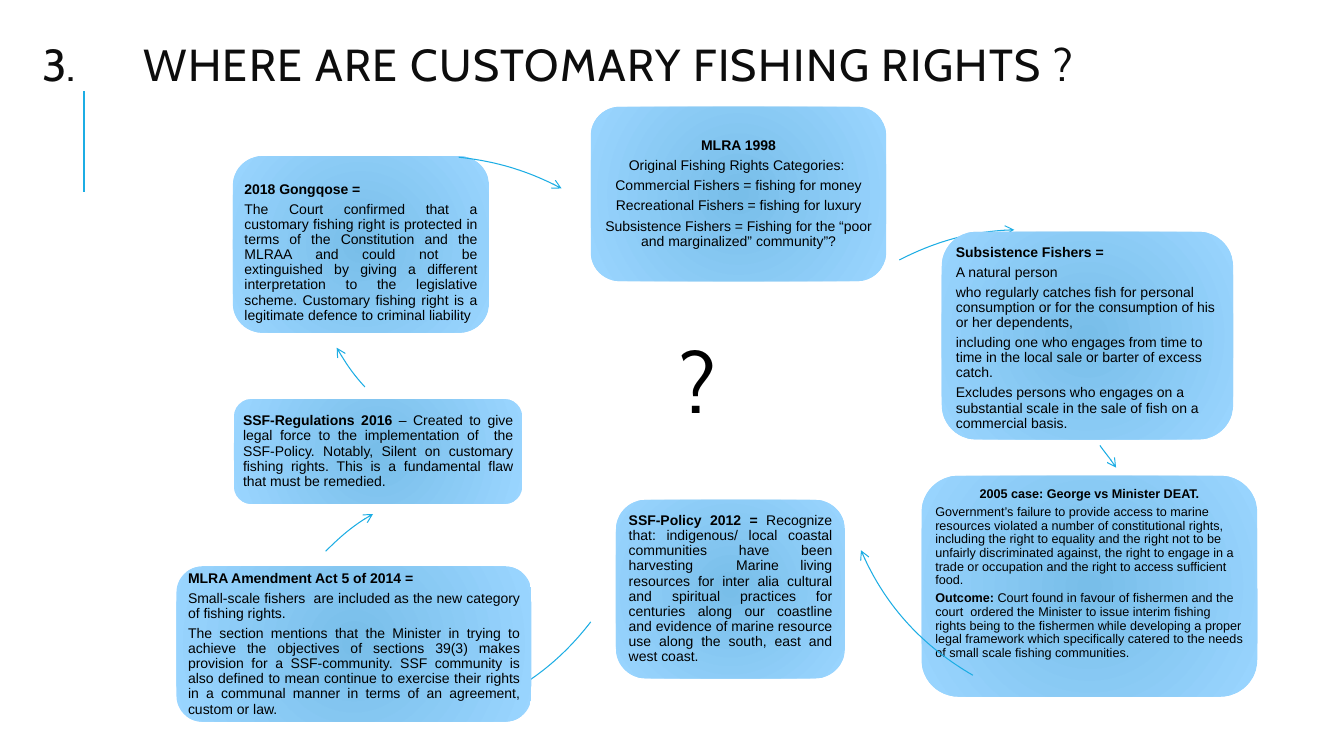
from lxml.etree import SubElement as Sub
from pptx import Presentation
from pptx.dml.color import RGBColor
from pptx.enum.shapes import MSO_CONNECTOR as Conn, MSO_SHAPE as Shape
from pptx.enum.text import MSO_ANCHOR as Anchor, MSO_AUTO_SIZE as Auto, PP_ALIGN as Align
from pptx.oxml.ns import qn
from pptx.util import Pt

PX = 9144
RING = 523
BLUE, BLACK = "1CADE4", "000000"
LEFT, MID, JUST = Align.LEFT, Align.CENTER, Align.JUSTIFY

CARDS = [
    dict(box=(586, 106, 293, 173), align=MID, lines=[
        "MLRA 1998|",
        "Original Fishing Rights Categories: ",
        "Commercial Fishers = fishing for money",
        "Recreational Fishers = fishing for luxury",
        "Subsistence Fishers = Fishing for the “poor and marginalized” community”?"]),
    dict(box=(934, 230, 289, 206), align=LEFT, anchor=Anchor.TOP, top=3, lines=[
        "Subsistence Fishers =|",
        "A natural person",
        "who regularly catches fish for personal consumption or for the consumption of his "
        "or her dependents,",
        "including one who engages from time to time in the local sale or barter of excess catch.",
        "Excludes persons who engages on a substantial scale in the sale of fish on a "
        "commercial basis."]),
    dict(box=(914, 472, 333, 219), align=LEFT, anchor=Anchor.TOP, size=9, pad=3, top=1, first=MID,
         lines=[
        "2005 case: George vs Minister DEAT.|",
        "Government’s failure to provide access to marine resources violated a number of "
        "constitutional rights, including the right to equality and the right not to be unfairly "
        "discriminated against, the right to engage in a trade or occupation and the right to "
        "access sufficient food.",
        "Outcome:| Court found in favour of fishermen and the court  ordered the Minister to "
        "issue interim fishing rights being to the fishermen while developing a proper legal "
        "framework which specifically catered to the needs of small scale fishing communities."]),
    dict(box=(611, 496, 227, 177), lines=[
        "SSF-Policy 2012 = |Recognize that: indigenous/ local coastal communities have been "
        "harvesting  Marine living resources for inter alia cultural and spiritual practices for "
        "centuries along our coastline and evidence of marine resource use along the south, "
        "east and west coast."]),
    dict(box=(175, 562, 352, 154), lines=[
        "MLRA Amendment Act 5 of 2014 = |",
        "Small-scale fishers  are included as the new category of fishing rights. ",
        "The section mentions that the Minister in trying to achieve the objectives of sections "
        "39(3) makes provision for a SSF-community. SSF community is also defined to mean "
        "continue to exercise their rights in a communal manner in terms of an agreement, "
        "custom or law."]),
    dict(box=(232, 396, 286, 104), lines=[
        "SSF-Regulations 2016 |– Created to give legal force to the implementation of  the "
        "SSF-Policy. Notably, Silent on customary fishing rights. This is a fundamental flaw "
        "that must be remedied. "]),
    dict(box=(231, 155, 254, 175), anchor=Anchor.TOP, pad=3, top=17, lines=[
        "2018 Gongqose = |",
        "The Court confirmed that a customary fishing right is protected in terms of the "
        "Constitution and the MLRAA and could not be extinguished by giving a different "
        "interpretation to the legislative scheme. Customary fishing right is a legitimate "
        "defence to criminal liability"]),
]

ARCS = [
    ((753, 228), ((892, 258), (927, 240), (966, 229), (1006, 228))),
    ((626, 345), ((1091, 442), (1096, 449), (1102, 456), (1107, 464))),
    ((832, 181), ((965, 670), (915, 641), (876, 598), (854, 546))),
    ((116, 197), ((586, 617), (556, 656), (515, 687), (468, 704))),
    ((247, 470), ((323, 547), (337, 533), (352, 520), (370, 510))),
    ((299, -48), ((362, 384), (351, 372), (342, 359), (334, 345))),
    ((169, 155), ((455, 156), (491, 160), (525, 170), (557, 187))),
]


def px(*vals):
    """Turn px lengths into EMU."""
    return [round(v * PX) for v in vals]


def hue(code):
    """Turn a hex string into a colour."""
    return RGBColor.from_string(code)


def write(frame, lines, size=10, font="Arial", color=BLACK, align=LEFT, lead=0.9, after=0.35):
    """Fill a frame with paragraphs; text before a bar is bold."""
    frame.word_wrap = True
    frame.auto_size = Auto.NONE
    for n, line in enumerate(lines):
        para = frame.add_paragraph() if n else frame.paragraphs[0]
        para.alignment, para.line_spacing = align, lead
        para.space_before, para.space_after = Pt(0), Pt(size * after)
        head, _, body = line.rpartition("|")
        for text, bold in ((head, True), (body, False)):
            if text:
                run = para.add_run()
                run.text = text
                face = run.font
                face.name, face.size, face.bold = font, Pt(size), bold
                face.color.rgb = hue(color)


def head(slide, box):
    """Place the numbered title and the rule below it."""
    title = slide.shapes.title
    x, y, w, h = box
    title.left, title.top, title.width, title.height = px(*box)
    frame = title.text_frame
    frame.vertical_anchor = Anchor.MIDDLE
    write(frame, ["WHERE ARE CUSTOMARY FISHING RIGHTS ?"], size=32, font="Cabin",
          color="0D0D0D", lead=0.8, after=0)
    para = frame.paragraphs[0]
    para.runs[0].font._element.set("spc", "100")
    props = para._p.get_or_add_pPr()
    props.set("marL", str(100 * PX))
    props.set("indent", str(-100 * PX))
    Sub(props, qn("a:buFont"), typeface="Cabin")
    Sub(props, qn("a:buAutoNum"), type="arabicPeriod", startAt="3")
    rule = slide.shapes.add_connector(Conn.STRAIGHT, *px(x + 51, y + 161, x + 51, y + 61))
    rule.line.color.rgb = hue(BLUE)
    rule.line.width = Pt(1.5)
    Sub(rule._element.spPr, qn("a:effectLst"))


def card(slide, box, lines, size=10, align=JUST, anchor=Anchor.MIDDLE, pad=4, top=None, first=None):
    """Place a rounded card with a radial fill and its text."""
    shape = slide.shapes.add_shape(Shape.ROUNDED_RECTANGLE, *px(*box))
    shape.shadow.inherit = False
    shape.line.fill.background()
    shape.fill.gradient()
    for stop, code in zip(shape.fill.gradient_stops, ("78BEE9", "9AD5FF")):
        stop.color.rgb = hue(code)
    grad = shape._element.spPr.find(qn("a:gradFill"))
    grad.remove(grad.find(qn("a:lin")))
    ring = Sub(grad, qn("a:path"), path="circle")
    Sub(ring, qn("a:fillToRect"), {side: "100000" for side in "ltrb"})
    frame = shape.text_frame
    frame.vertical_anchor = anchor
    frame.margin_left = frame.margin_right = frame.margin_bottom = pad * PX
    frame.margin_top = (top or pad) * PX
    write(frame, lines, size=size, align=align)
    if first is not None:
        frame.paragraphs[0].alignment = first


def arc(slide, spot, knots):
    """Draw a curved arrow within the square of its ring."""
    x, y = spot
    pen = slide.shapes.build_freeform(*px(x, y), scale=1.0)
    pen.add_line_segments([px(x + RING, y + RING)], close=False)
    curve = pen.convert_to_shape()
    route = next(curve._element.iter(qn("a:path")))
    for step in list(route):
        route.remove(step)
    move = Sub(route, qn("a:moveTo"))
    bend = Sub(route, qn("a:cubicBezTo"))
    for n, (kx, ky) in enumerate(knots):
        left, top = px(kx - x, ky - y)
        Sub(bend if n else move, qn("a:pt"), x=str(left), y=str(top))
    curve.shadow.inherit = False
    curve.fill.background()
    curve.line.color.rgb = hue(BLUE)
    curve.line.width = Pt(0.75)
    Sub(curve.line._get_or_add_ln(), qn("a:tailEnd"), type="arrow")


def mark(slide, box):
    """Place the large question mark in the middle."""
    frame = slide.shapes.add_textbox(*px(*box)).text_frame
    write(frame, ["?"], size=60, font="Cabin", lead=1.0, after=0)


def main():
    """Build and save the slide."""
    deck = Presentation()
    deck.slide_width, deck.slide_height = px(1333, 750)
    slide = deck.slides.add_slide(deck.slide_layouts[5])
    head(slide, (32, 29, 1050, 78))
    for item, (spot, knots) in zip(CARDS, ARCS):
        card(slide, **item)
        arc(slide, spot, knots)
    mark(slide, (664, 322, 77, 111))
    deck.save("out.pptx")


if __name__ == "__main__":
    main()
